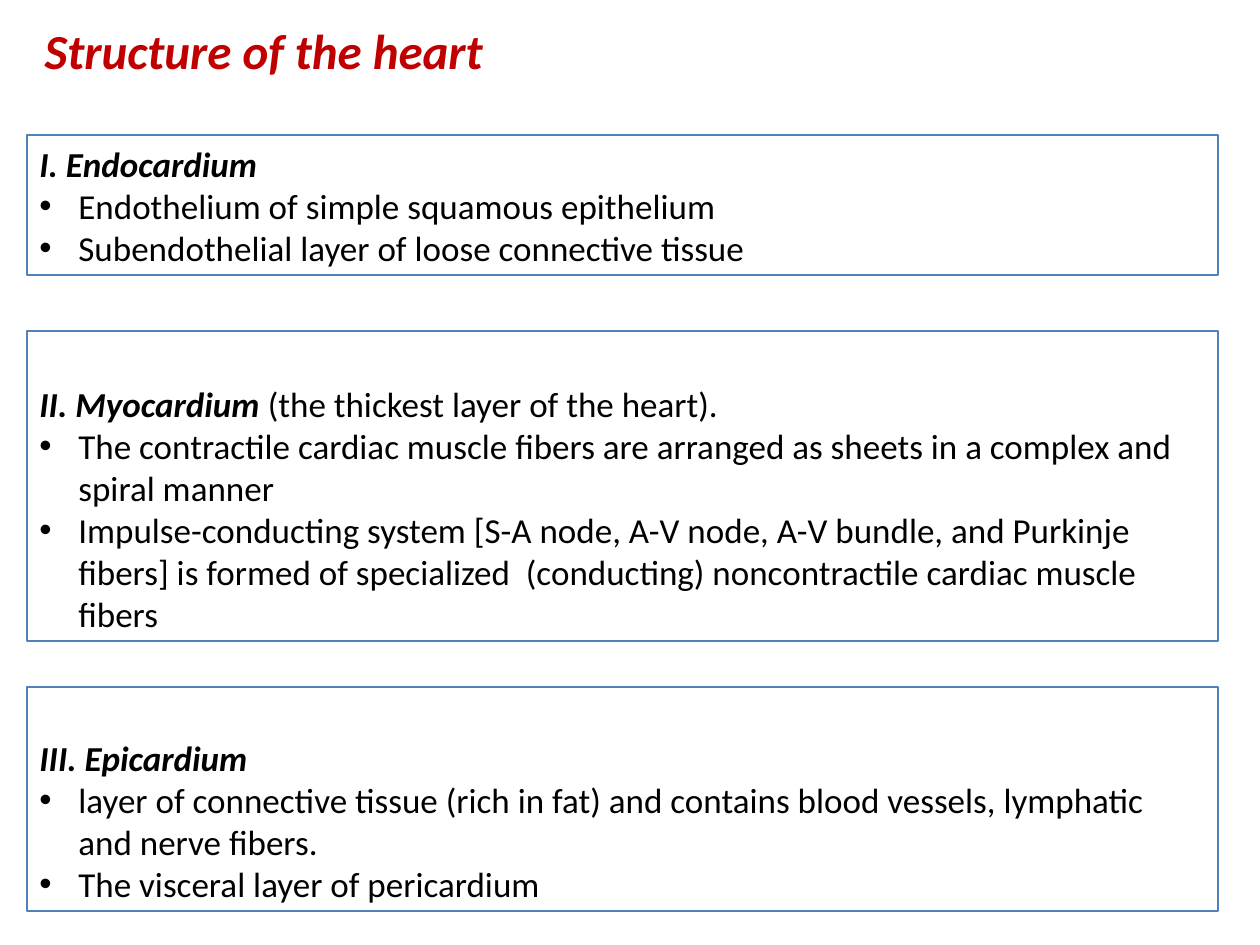
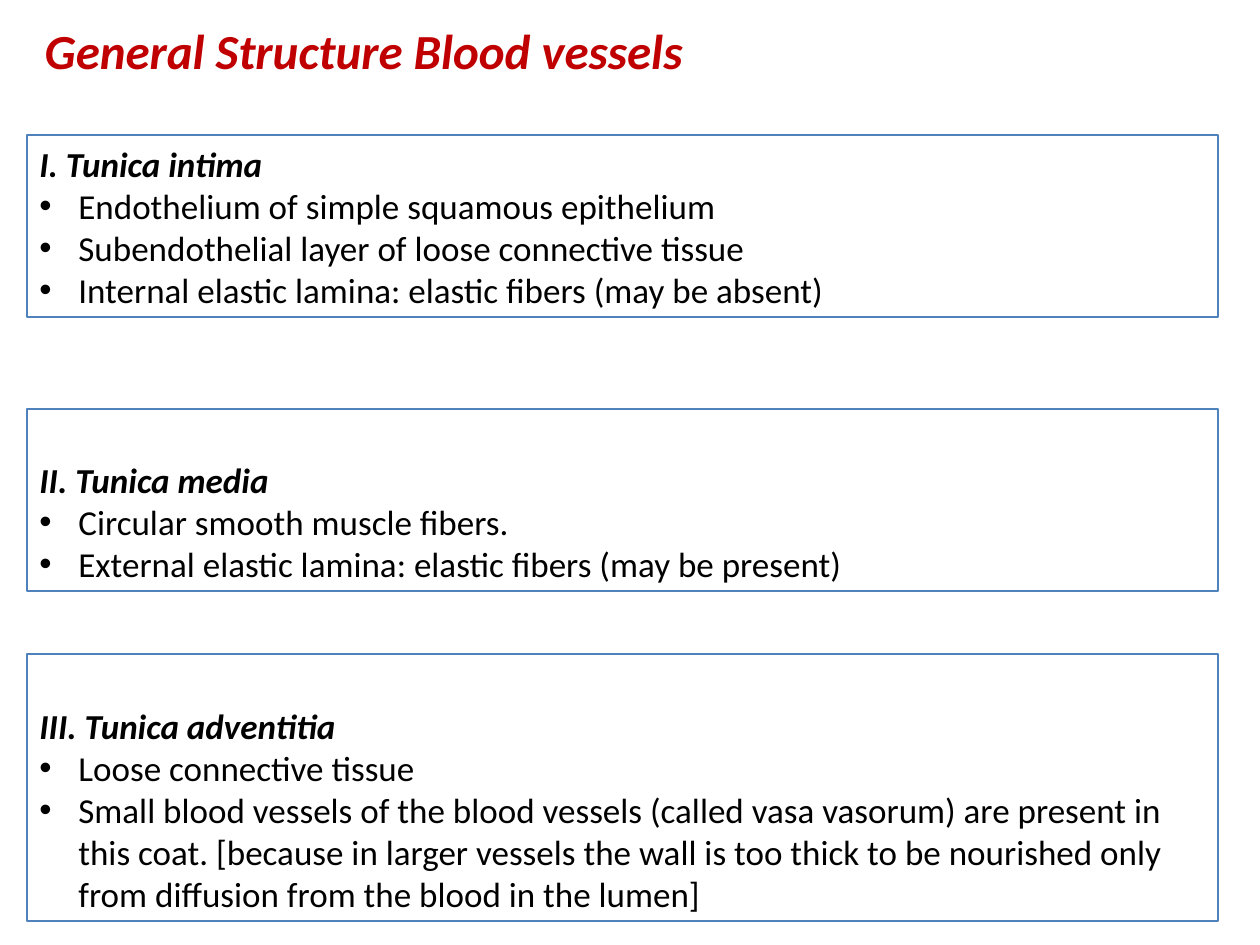
from dataclasses import dataclass

from lxml.etree import SubElement
from pptx import Presentation
from pptx.dml.color import RGBColor
from pptx.enum.shapes import MSO_SHAPE
from pptx.enum.text import MSO_ANCHOR, MSO_AUTO_SIZE, PP_ALIGN
from pptx.oxml.ns import qn
from pptx.util import Emu, Pt

EMU_PER_PX = 914400 / 126


@dataclass(frozen=True)
class Theme:
    """Colours, font and type sizes shared by the slides."""
    font: str = "Calibri"
    title_color: RGBColor = RGBColor(0xC0, 0x00, 0x00)
    text_color: RGBColor = RGBColor(0x00, 0x00, 0x00)
    outline_color: RGBColor = RGBColor(0x4F, 0x81, 0xBD)
    title_size: Pt = Pt(28)
    text_size: Pt = Pt(20)
    outline_width: Pt = Pt(0.75)


@dataclass(frozen=True)
class Layer:
    """One tissue layer with its vertical place and its facts."""
    top: int
    height: int
    name: str
    facts: tuple
    remark: str = ""


THEME = Theme()
TITLE_BOX = (32, 14, 932, 72)
LAYER_LEFT, LAYER_WIDTH = 27, 1191
BULLET_INDENT = 39

SLIDES = {
    "Structure of the heart": (
        Layer(135, 140, "I. Endocardium", (
            "Endothelium of simple squamous epithelium",
            "Subendothelial layer of loose connective tissue",
        )),
        Layer(331, 310, "II. Myocardium ", (
            "The contractile cardiac muscle fibers are arranged as sheets in a "
            "complex and spiral manner",
            "Impulse-conducting system [S-A node, A-V node, A-V bundle, and "
            "Purkinje fibers] is formed of specialized  (conducting) "
            "noncontractile cardiac muscle fibers",
        ), "(the thickest layer of the heart)."),
        Layer(687, 224, "III. Epicardium", (
            "layer of connective tissue (rich in fat) and contains blood "
            "vessels, lymphatic and nerve fibers.",
            "The visceral layer of pericardium",
        )),
    ),
    "General Structure Blood vessels": (
        Layer(135, 182, "I. Tunica intima", (
            "Endothelium of simple squamous epithelium",
            "Subendothelial layer of loose connective tissue",
            "Internal elastic lamina: elastic fibers (may be absent)",
        )),
        Layer(409, 182, "II. Tunica media", (
            "Circular smooth muscle fibers.",
            "External elastic lamina: elastic fibers (may be present)",
        )),
        Layer(654, 267, "III. Tunica adventitia", (
            "Loose connective tissue",
            "Small blood vessels of the blood vessels (called vasa vasorum) "
            "are present in this coat. [because in larger vessels the wall is "
            "too thick to be nourished only from diffusion from the blood in "
            "the lumen]",
        )),
    ),
}


def px(length):
    """Turn a length in px into EMU."""
    return Emu(round(length * EMU_PER_PX))


def format_run(run, size, color, strong):
    """Give a run its font, size, colour and emphasis."""
    font = run.font
    font.name, font.size, font.bold, font.italic = THEME.font, size, strong, strong
    font.color.rgb = color


def prepare_frame(text_frame, anchor):
    """Set wrapping, fixed size and vertical anchor of a text frame."""
    text_frame.word_wrap = True
    text_frame.auto_size = MSO_AUTO_SIZE.NONE
    text_frame.vertical_anchor = anchor


def add_bullet(paragraph):
    """Give a paragraph a bullet and a hanging indent."""
    properties = paragraph._p.get_or_add_pPr()
    properties.set("marL", str(px(BULLET_INDENT)))
    properties.set("indent", str(-px(BULLET_INDENT)))
    SubElement(properties, qn("a:buFont"), typeface="Arial")
    SubElement(properties, qn("a:buChar"), char="•")


def place_title(slide, text, box):
    """Move, fill and format the title placeholder."""
    title = slide.shapes.title
    title.left, title.top, title.width, title.height = map(px, box)
    prepare_frame(title.text_frame, MSO_ANCHOR.TOP)
    title.text_frame.text = text
    paragraph = title.text_frame.paragraphs[0]
    paragraph.alignment = PP_ALIGN.LEFT
    format_run(paragraph.runs[0], THEME.title_size, THEME.title_color, True)


def add_layer(slide, layer, box):
    """Draw an outlined box with a layer's heading and bulleted facts."""
    shape = slide.shapes.add_shape(MSO_SHAPE.RECTANGLE, *map(px, box))
    shape.shadow.inherit = False
    shape.fill.background()
    shape.line.color.rgb = THEME.outline_color
    shape.line.width = THEME.outline_width
    text_frame = shape.text_frame
    prepare_frame(text_frame, MSO_ANCHOR.BOTTOM)
    text_frame.text = layer.name
    heading = text_frame.paragraphs[0]
    heading.alignment = PP_ALIGN.LEFT
    format_run(heading.runs[0], THEME.text_size, THEME.text_color, True)
    if layer.remark:
        remark = heading.add_run()
        remark.text = layer.remark
        format_run(remark, THEME.text_size, THEME.text_color, False)
    for fact in layer.facts:
        paragraph = text_frame.add_paragraph()
        paragraph.text = fact
        paragraph.alignment = PP_ALIGN.LEFT
        add_bullet(paragraph)
        format_run(paragraph.runs[0], THEME.text_size, THEME.text_color, False)


def add_layers_slide(presentation, title, layers):
    """Add a slide with a title and a stack of layer boxes."""
    slide = presentation.slides.add_slide(presentation.slide_layouts[5])
    place_title(slide, title, TITLE_BOX)
    for layer in layers:
        add_layer(slide, layer, (LAYER_LEFT, layer.top, LAYER_WIDTH, layer.height))


def main():
    """Build and save the presentation."""
    presentation = Presentation()
    presentation.slide_width, presentation.slide_height = px(1260), px(945)
    for title, layers in SLIDES.items():
        add_layers_slide(presentation, title, layers)
    presentation.save("out.pptx")


if __name__ == "__main__":
    main()
